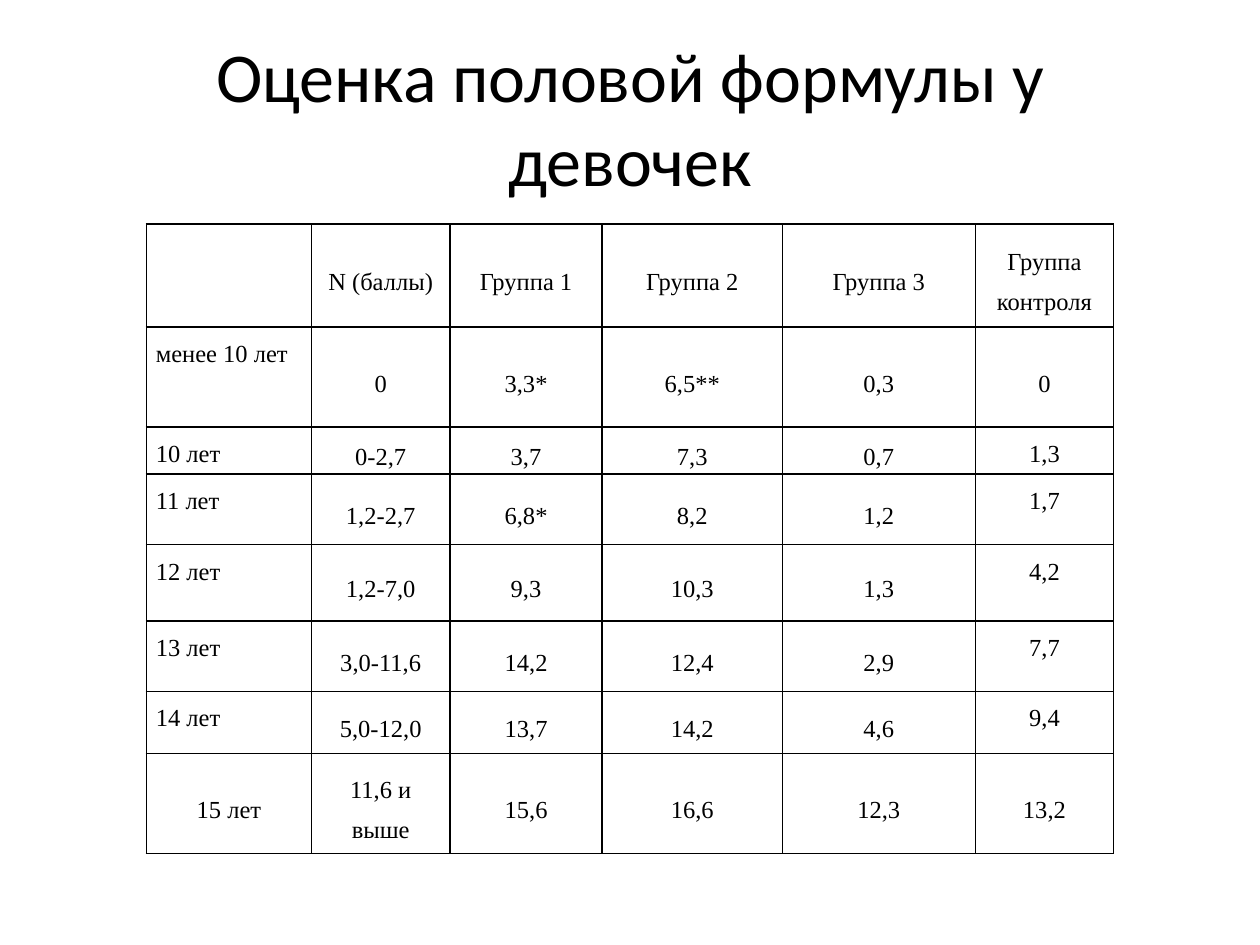
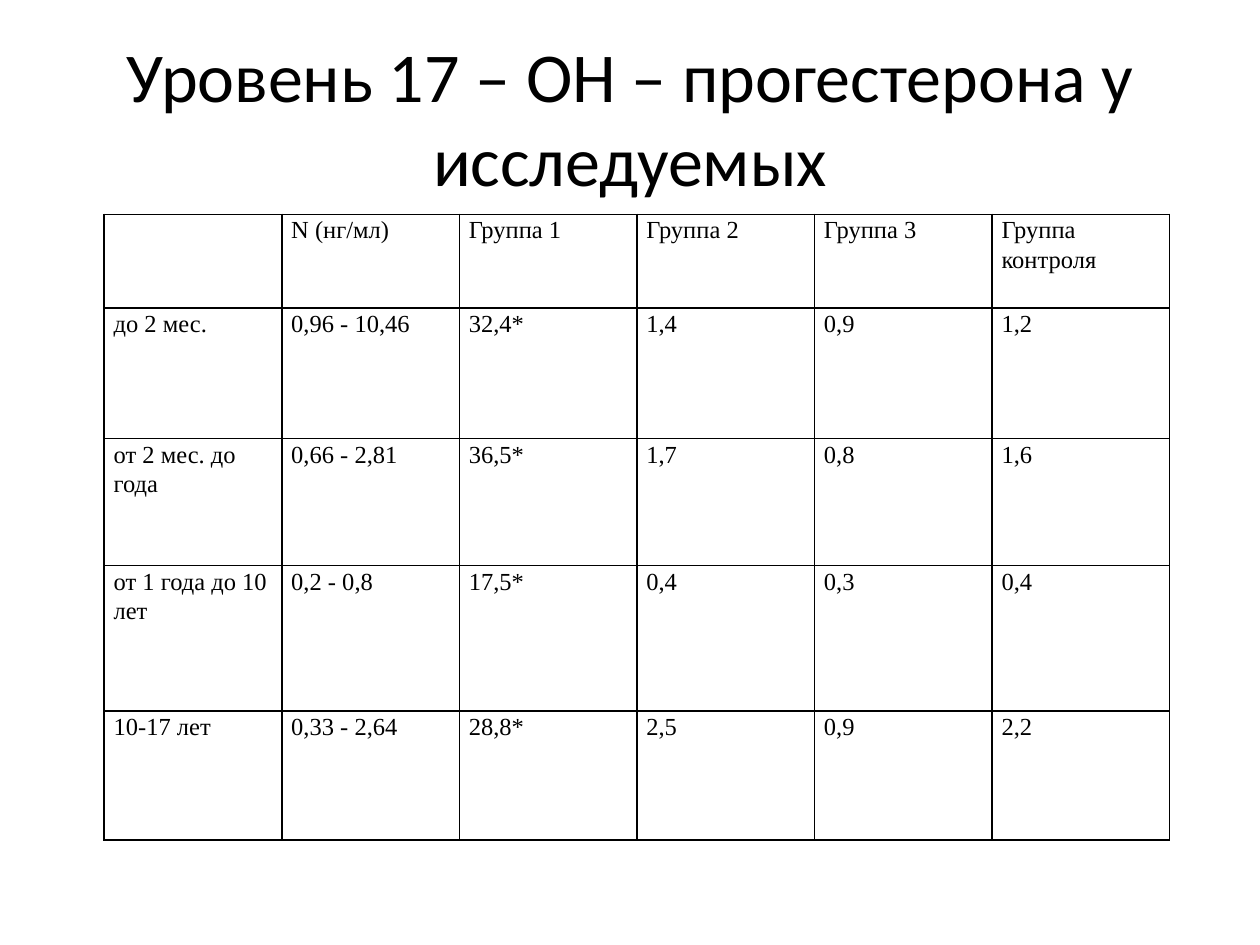
"""Build two slides that compare study groups in bordered tables."""
from dataclasses import dataclass

from lxml.etree import SubElement
from pptx import Presentation
from pptx.dml.color import RGBColor
from pptx.enum.text import MSO_ANCHOR as Anchor, MSO_AUTO_SIZE as AutoSize, PP_ALIGN as Align
from pptx.oxml.ns import qn
from pptx.util import Cm, Pt


@dataclass(frozen=True)
class Theme:
    ink: str = "000000"
    title_font: str = "Calibri"
    table_font: str = "Times New Roman"
    title_size: int = 40
    table_size: int = 14
    border_width: int = 1


theme = Theme()


def write(frame, text, font=theme.table_font, size=theme.table_size,
          align=Align.LEFT, line_spacing=1.0, space_after=0):
    frame.word_wrap = True
    paragraph = frame.paragraphs[0]
    paragraph.alignment = align
    paragraph.line_spacing = line_spacing
    paragraph.space_after = Pt(space_after)
    run = paragraph.add_run()
    run.text = text
    run.font.name = font
    run.font.size = Pt(size)
    run.font.color.rgb = RGBColor.from_string(theme.ink)


def draw_borders(cell):
    properties = cell._tc.get_or_add_tcPr()
    for side in ("a:lnL", "a:lnR", "a:lnT", "a:lnB"):
        line = SubElement(properties, qn(side), w=str(Pt(theme.border_width)))
        fill = SubElement(line, qn("a:solidFill"))
        SubElement(fill, qn("a:srgbClr"), val=theme.ink)


groups = ["Группа 1", "Группа 2", "Группа 3", "Группа контроля"]
slides = [
    {
        "title": "Оценка половой формулы у девочек",
        "left": 2.95, "top": 4.52,
        "widths": [3.33, 2.79, 3.07, 3.63, 3.89, 2.79],
        "heights": [2.07, 2.02, 0.95, 1.42, 1.54, 1.42, 1.25, 2.02],
        "line_spacing": 1.5,
        "centred": True,
        "rows": [
            ["", "N (баллы)", *groups],
            ["менее 10 лет", "0", "3,3*", "6,5**", "0,3", "0"],
            ["10 лет", "0-2,7", "3,7", "7,3", "0,7", "1,3"],
            ["11 лет", "1,2-2,7", "6,8*", "8,2", "1,2", "1,7"],
            ["12 лет", "1,2-7,0", "9,3", "10,3", "1,3", "4,2"],
            ["13 лет", "3,0-11,6", "14,2", "12,4", "2,9", "7,7"],
            ["14 лет", "5,0-12,0", "13,7", "14,2", "4,6", "9,4"],
            ["15 лет", "11,6 и выше", "15,6", "16,6", "12,3", "13,2"],
        ],
    },
    {
        "title": "Уровень 17 – ОН – прогестерона у исследуемых",
        "left": 2.1, "top": 4.32,
        "widths": [3.58] * 6,
        "heights": [1.89, 2.63, 2.56, 2.93, 2.6],
        "line_spacing": 1.1,
        "centred": False,
        "rows": [
            ["", "N (нг/мл)", *groups],
            ["до 2 мес.", "0,96 - 10,46", "32,4*", "1,4", "0,9", "1,2"],
            ["от 2 мес. до года", "0,66 - 2,81", "36,5*", "1,7", "0,8", "1,6"],
            ["от 1 года до 10 лет", "0,2 - 0,8", "17,5*", "0,4", "0,3", "0,4"],
            ["10-17 лет", "0,33 - 2,64", "28,8*", "2,5", "0,9", "2,2"],
        ],
    },
]

presentation = Presentation()
presentation.slide_width = Cm(25.4)
presentation.slide_height = Cm(19.05)

for content in slides:
    slide = presentation.slides.add_slide(presentation.slide_layouts[6])
    title = slide.shapes.add_textbox(Cm(1.96), Cm(0.53), Cm(21.49), Cm(3.68))
    title.text_frame.auto_size = AutoSize.SHAPE_TO_FIT_TEXT
    write(title.text_frame, content["title"], font=theme.title_font,
          size=theme.title_size, align=Align.CENTER)

    rows, widths, heights = content["rows"], content["widths"], content["heights"]
    table = slide.shapes.add_table(
        len(rows), len(widths), Cm(content["left"]), Cm(content["top"]),
        Cm(sum(widths)), Cm(sum(heights))).table
    table.first_row = table.horz_banding = False
    for column, width in zip(table.columns, widths):
        column.width = Cm(width)
    for row, height in zip(table.rows, heights):
        row.height = Cm(height)

    last_row, last_column = len(rows) - 1, len(widths) - 1
    for row_index, row in enumerate(rows):
        for column_index, text in enumerate(row):
            cell = table.cell(row_index, column_index)
            draw_borders(cell)
            cell.fill.background()
            cell.margin_left = cell.margin_right = Cm(0.19)
            cell.margin_top = cell.margin_bottom = 0
            age_label = column_index == 0 and row_index < last_row
            control_value = column_index == last_column and 1 < row_index < last_row
            align, anchor = Align.LEFT, Anchor.TOP
            if content["centred"]:
                align = Align.JUSTIFY if age_label else Align.CENTER
                anchor = Anchor.TOP if age_label or control_value else Anchor.MIDDLE
            cell.vertical_anchor = anchor
            if text:
                write(cell.text_frame, text, align=align,
                      line_spacing=content["line_spacing"], space_after=8)

presentation.save("out.pptx")
